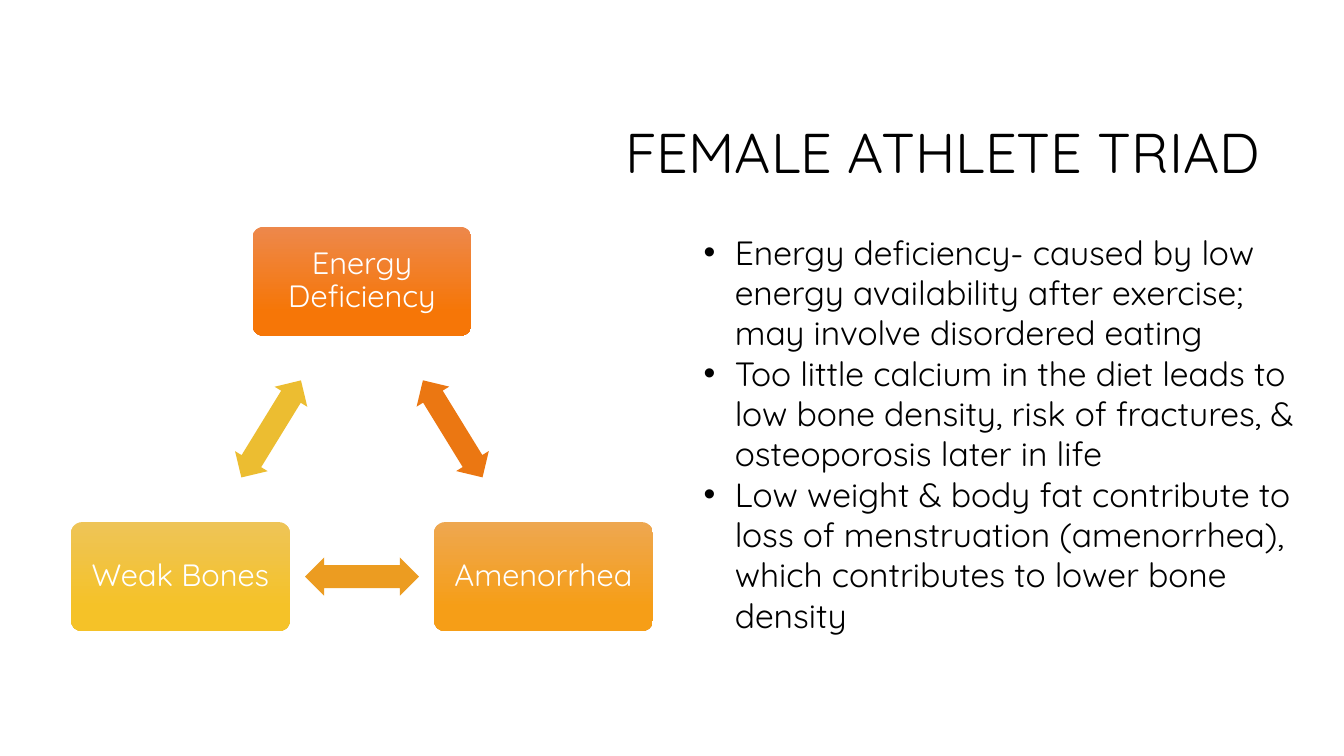
import math
from lxml import etree
from pptx import Presentation
from pptx import util as u
from pptx.dml.color import RGBColor
from pptx.enum import shapes, text
from pptx.oxml.ns import qn

# Content
TITLE = "FEMALE ATHLETE TRIAD"
BULLETS = [
    "Energy deficiency- caused by low energy availability after exercise; may involve disordered eating",
    "Too little calcium in the diet leads to low bone density, risk of fractures, & osteoporosis later in life",
    "Low weight & body fat contribute to loss of menstruation (amenorrhea), which contributes to lower bone density",
]
BLACK = RGBColor(0x00, 0x00, 0x00)
WHITE = RGBColor(0xFF, 0xFF, 0xFF)
ORANGE_TOP, ORANGE, ORANGE_ARROW = (RGBColor.from_string(c) for c in ("ED884B", "F67607", "EB7712"))
AMBER_TOP, AMBER, AMBER_ARROW = (RGBColor.from_string(c) for c in ("EEA750", "F69E17", "EC9C21"))
YELLOW_TOP, YELLOW, YELLOW_ARROW = (RGBColor.from_string(c) for c in ("EEC457", "F5C228", "ECBD31"))

# Triad corners: label, column, row, gradient top, gradient bottom, arrow to the next corner
CORNERS = [
    ("Energy Deficiency", 1, 0, ORANGE_TOP, ORANGE, ORANGE_ARROW),
    ("Amenorrhea", 2, 1, AMBER_TOP, AMBER, AMBER_ARROW),
    ("Weak Bones", 0, 1, YELLOW_TOP, YELLOW, YELLOW_ARROW),
]

# Grid in inches: centre of the first cell, column and row steps
X0, Y0, COL, ROW = 1.79, 2.79, 1.8, 2.93
NODE_W, NODE_H = 2.17, 1.08
ARROW_W, ARROW_H = 1.13, 0.38
FONT = "Quicksand"

prs = Presentation()
prs.slide_width, prs.slide_height = u.Inches(13.33), u.Inches(7.5)
s = prs.slides.add_slide(prs.slide_layouts[6])


def style(obj, **values):
    for name, value in values.items():
        setattr(obj, name, value)


def write(p, words, size, color):
    p.add_run().text = words
    style(p.runs[0].font, name=FONT, size=u.Pt(size))
    p.runs[0].font.color.rgb = color


def add_centred(kind, x, y, w, h):
    sp = s.shapes.add_shape(kind, *(u.Inches(v) for v in (x - w / 2, y - h / 2, w, h)))
    sp.shadow.inherit = False
    sp.line.fill.background()
    return sp


def add_text(x, y, w, h, **frame):
    tf = s.shapes.add_textbox(*(u.Inches(v) for v in (x, y, w, h))).text_frame
    style(tf, word_wrap=True, **frame)
    return tf


# Title
p = add_text(3.17, 0.84, 9.42, 1.41, vertical_anchor=text.MSO_ANCHOR.MIDDLE).paragraphs[0]
style(p, alignment=text.PP_ALIGN.RIGHT, line_spacing=0.9)
write(p, TITLE, 40, BLACK)

# Triad: each box, then the arrow towards the next box
centres = [(X0 + col * COL, Y0 + row * ROW) for _, col, row, *_ in CORNERS]
for i, (label, _, _, top, bottom, arrow_color) in enumerate(CORNERS):
    (x, y), (next_x, next_y) = centres[i], centres[(i + 1) % len(centres)]
    box = add_centred(shapes.MSO_SHAPE.ROUNDED_RECTANGLE, x, y, NODE_W, NODE_H)
    box.adjustments[0] = 0.1
    box.fill.gradient()
    box.fill.gradient_angle = 270
    for stop, position, color in zip(box.fill.gradient_stops, (0, 0.78), (top, bottom)):
        stop.position = position
        stop.color.rgb = color
    tf = box.text_frame
    style(tf, word_wrap=True, vertical_anchor=text.MSO_ANCHOR.MIDDLE,
          **{f"margin_{side}": u.Inches(0.09) for side in ("left", "top", "right", "bottom")})
    style(tf.paragraphs[0], alignment=text.PP_ALIGN.CENTER, line_spacing=0.9)
    write(tf.paragraphs[0], label, 22, WHITE)

    arrow = add_centred(shapes.MSO_SHAPE.LEFT_RIGHT_ARROW,
                        (x + next_x) / 2, (y + next_y) / 2, ARROW_W, ARROW_H)
    arrow.adjustments[0], arrow.adjustments[1] = 0.6, 0.5
    arrow.rotation = math.degrees(math.atan2(next_y - y, next_x - x)) % 360
    arrow.fill.solid()
    arrow.fill.fore_color.rgb = arrow_color

# Bullets
tf = add_text(6.88, 2.25, 6.21, 4.14, auto_size=text.MSO_AUTO_SIZE.SHAPE_TO_FIT_TEXT)
for i, words in enumerate(BULLETS):
    p = tf.add_paragraph() if i else tf.paragraphs[0]
    pPr = p._p.get_or_add_pPr()
    pPr.set("marL", str(u.Inches(0.31)))
    pPr.set("indent", str(-u.Inches(0.31)))
    etree.SubElement(pPr, qn("a:buFont")).set("typeface", "Arial")
    etree.SubElement(pPr, qn("a:buChar")).set("char", "•")
    write(p, words, 24, BLACK)

prs.save("out.pptx")
